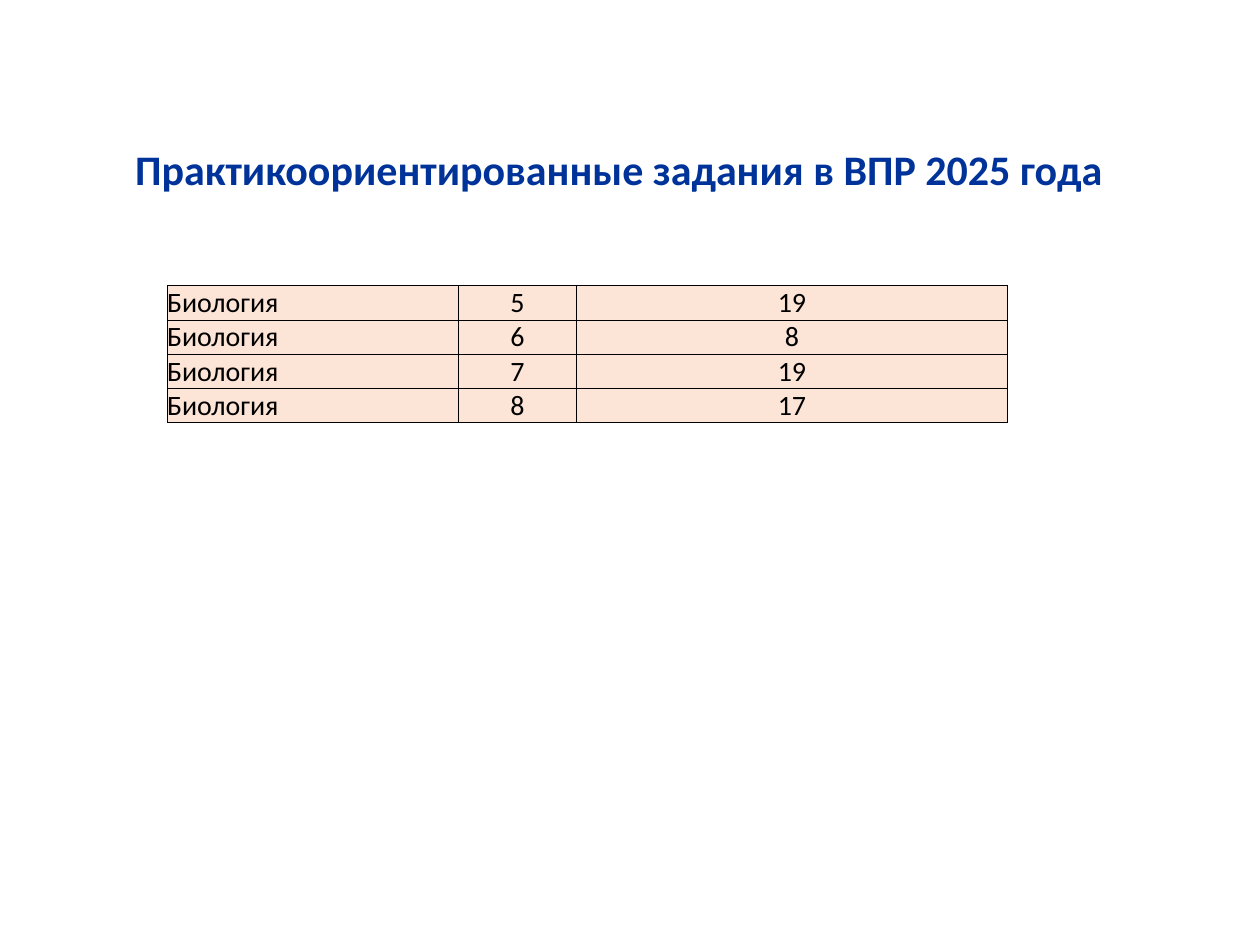
from dataclasses import dataclass

from lxml.etree import SubElement
from pptx import Presentation
from pptx.dml.color import RGBColor
from pptx.enum.text import MSO_ANCHOR as Anchor, MSO_AUTO_SIZE as Fit, PP_ALIGN as Align
from pptx.oxml.ns import qn
from pptx.util import Cm, Pt

FONT = "Calibri"
BLACK, BLUE, PEACH = "000000", "003399", "FCE4D6"
ROW_H = 0.68


@dataclass(frozen=True)
class Column:
    width: float
    align: Align
    anchor: Anchor


COLUMNS = (
    Column(5.87, Align.LEFT, Anchor.BOTTOM),
    Column(2.38, Align.CENTER, Anchor.MIDDLE),
    Column(8.69, Align.CENTER, Anchor.BOTTOM),
)
TASKS = (
    ("Биология", 5, 19),
    ("Биология", 6, 8),
    ("Биология", 7, 19),
    ("Биология", 8, 17),
)


def color(code: str) -> RGBColor:
    return RGBColor.from_string(code)


def write(frame, text: str, align: Align, size: int, code: str, bold: bool) -> None:
    para = frame.paragraphs[0]
    para.alignment = align
    run = para.add_run()
    run.text = text
    for name, value in {"name": FONT, "size": Pt(size), "bold": bold}.items():
        setattr(run.font, name, value)
    run.font.color.rgb = color(code)


def add_title(slide, text: str) -> None:
    title = slide.shapes.title
    box = {"left": 0.58, "top": 2.77, "width": 23.8, "height": 1.27}
    for name, value in box.items():
        setattr(title, name, Cm(value))
    frame = title.text_frame
    frame.word_wrap = True
    frame.auto_size = Fit.NONE
    frame.vertical_anchor = Anchor.MIDDLE
    write(frame, text, Align.CENTER, 24, BLUE, True)


def add_border(cell, code: str, width: float) -> None:
    props = cell._tc.get_or_add_tcPr()
    for side in ("lnL", "lnR", "lnT", "lnB"):
        line = SubElement(props, qn(f"a:{side}"), w=str(Pt(width)))
        fill = SubElement(line, qn("a:solidFill"))
        SubElement(fill, qn("a:srgbClr"), val=code)


def fill_cell(cell, text: str, col: Column) -> None:
    for side in ("left", "right", "top", "bottom"):
        setattr(cell, f"margin_{side}", 0)
    cell.vertical_anchor = col.anchor
    add_border(cell, BLACK, 0.5)
    cell.fill.solid()
    cell.fill.fore_color.rgb = color(PEACH)
    write(cell.text_frame, text, col.align, 16, BLACK, False)


def add_tasks(slide) -> None:
    width = sum(col.width for col in COLUMNS)
    table = slide.shapes.add_table(
        len(TASKS), len(COLUMNS), Cm(3.37), Cm(5.76), Cm(width), Cm(ROW_H * len(TASKS))
    ).table
    table.first_row = table.horz_banding = False
    for i, col in enumerate(COLUMNS):
        table.columns[i].width = Cm(col.width)
    for r, task in enumerate(TASKS):
        table.rows[r].height = Cm(ROW_H)
        for c, (value, col) in enumerate(zip(task, COLUMNS)):
            fill_cell(table.cell(r, c), str(value), col)


def main() -> None:
    deck = Presentation()
    deck.slide_width, deck.slide_height = Cm(25.4), Cm(19.05)
    slide = deck.slides.add_slide(deck.slide_layouts[5])
    add_title(slide, "Практикоориентированные задания в ВПР 2025 года")
    add_tasks(slide)
    deck.save("out.pptx")


if __name__ == "__main__":
    main()
